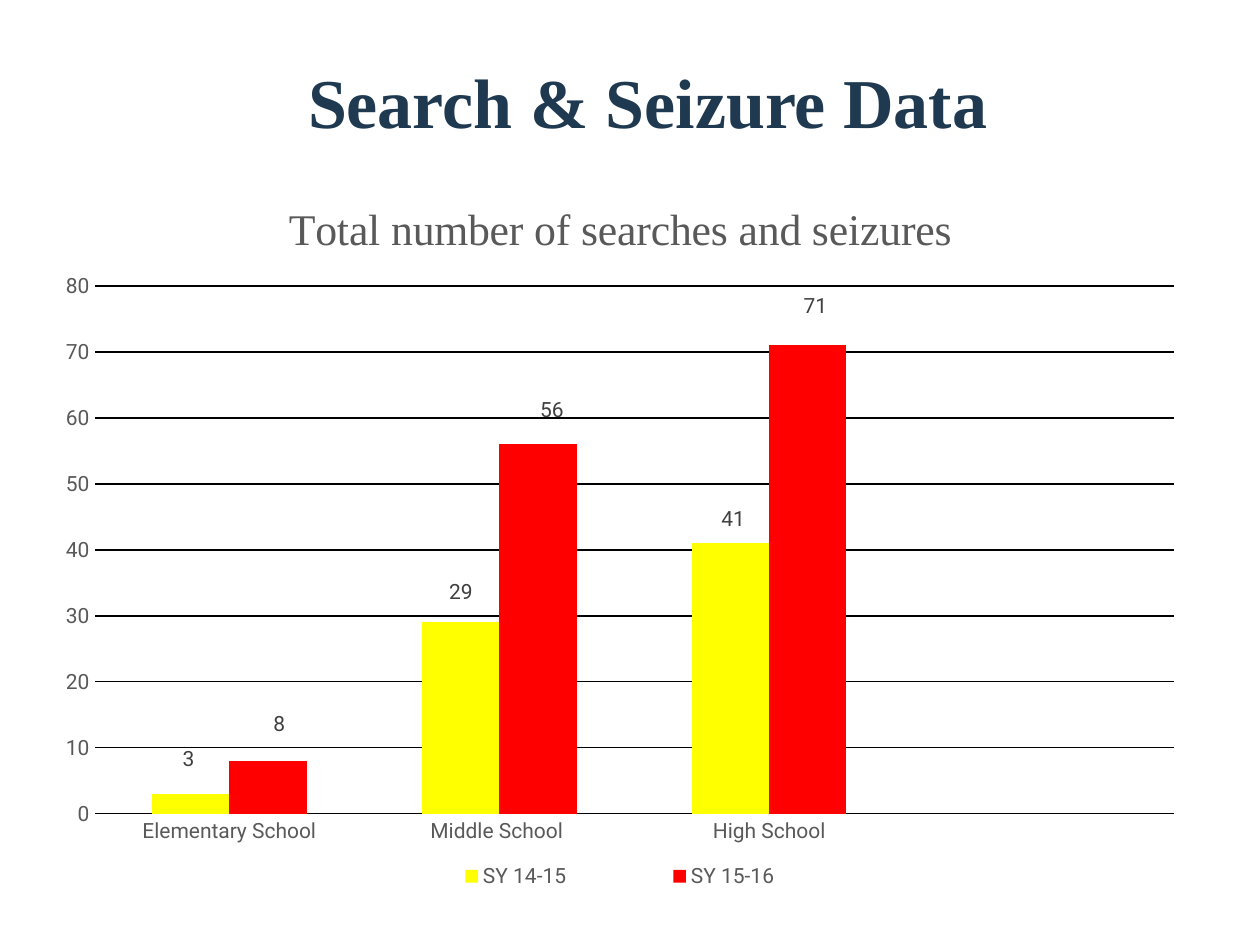
from dataclasses import dataclass

from lxml import etree
from pptx import Presentation
from pptx.chart.data import CategoryChartData
from pptx.dml.color import RGBColor
from pptx.enum import chart as ch, text
from pptx.oxml.ns import qn
from pptx.util import Inches, Pt

COLORS = {"navy": "1E3950", "gray": "595959", "label": "404040",
          "grid": "000000", "yellow": "FFFF00", "red": "FF0000"}
SERIF, SANS = "Times New Roman", "Roboto"
SCHOOLS = ["Elementary School", "Middle School ", "High School", ""]
CHART_WIDTH, CHART_HEIGHT = 9.17, 5.75
C15 = "http://schemas.microsoft.com/office/drawing/2012/chart"
LABEL_EXTENSION = "{CE6537A1-D6FC-4f65-9D91-7224C49458BB}"


@dataclass
class SchoolYear:
    name: str
    searches: list[int | None]
    color: str
    label_shifts: list[tuple[float, float]]  # inches right and down


@dataclass
class Spot:
    """Inches from the chart's top left corner."""
    left: float
    top: float
    width: float | None = None
    height: float | None = None


YEARS = [
    SchoolYear("SY 14-15", [3, 29, 41, None], "yellow",
               [(-0.02, -0.14), (0, -0.1), (0.02, -0.05)]),
    SchoolYear("SY 15-16", [8, 56, 71, None], "red",
               [(0.09, -0.15), (0.11, -0.13), (0.06, -0.17)]),
]
HEADING = Spot(1.9, 0.12)
PLOT = Spot(0.42, 0.85, 8.57, 4.19)
LEGEND = Spot(2.57, 5.36, 4.04, 0.35)


def rgb(name: str) -> RGBColor:
    return RGBColor.from_string(COLORS[name])


def style(font, face: str, size: float, color: str, bold: bool = False) -> None:
    font.name, font.size, font.bold = face, Pt(size), bold
    font.color.rgb = rgb(color)


def set_layout(part, index: int, **values) -> None:
    """Give a chart part a manual layout, as its child at the given index."""
    for old in part.findall(qn("c:layout")):
        part.remove(old)
    layout = etree.Element(qn("c:layout"))
    manual = etree.SubElement(layout, qn("c:manualLayout"))
    for tag, value in values.items():
        etree.SubElement(manual, qn(f"c:{tag}")).set("val", str(value))
    part.insert(index, layout)


def place(part, index: int, spot: Spot, **target) -> None:
    """Put a chart part at a spot, turned into fractions of the chart."""
    values = {"x": spot.left / CHART_WIDTH, "y": spot.top / CHART_HEIGHT}
    if spot.width is not None:
        values |= {"w": spot.width / CHART_WIDTH, "h": spot.height / CHART_HEIGHT}
    set_layout(part, index, **target, xMode="edge", yMode="edge", **values)


def hide_leader_lines(labels) -> None:
    for lines in labels.findall(qn("c:showLeaderLines")):
        lines.set("val", "0")
    extensions = etree.SubElement(labels, qn("c:extLst"))
    extension = etree.SubElement(extensions, qn("c:ext"), nsmap={"c15": C15})
    extension.set("uri", LABEL_EXTENSION)
    etree.SubElement(extension, f"{{{C15}}}showLeaderLines").set("val", "0")


def format_series(series, year: SchoolYear) -> None:
    series.format.fill.solid()
    series.format.fill.fore_color.rgb = rgb(year.color)
    series.invert_if_negative = False

    for point in range(len(year.label_shifts)):
        label = series.points[point].data_label
        style(label.font, SANS, 12, "label")
        label.position = ch.XL_LABEL_POSITION.OUTSIDE_END

    labels = series.data_labels._element
    for label, (right, down) in zip(labels.findall(qn("c:dLbl")), year.label_shifts):
        set_layout(label, 1, x=right / CHART_WIDTH, y=down / CHART_HEIGHT)
    hide_leader_lines(labels)


def format_heading(chart) -> None:
    chart.has_title = True
    heading = chart.chart_title.text_frame
    heading.text = "Total number of searches and seizures"
    style(heading.paragraphs[0].font, SERIF, 25, "gray")
    place(chart.chart_title._element, 1, HEADING)


def format_plot(chart) -> None:
    plot = chart.plots[0]
    plot.gap_width, plot.overlap, plot.vary_by_categories = 150, 0, False
    place(chart._chartSpace.chart.plotArea, 0, PLOT, layoutTarget="inner")
    for series, year in zip(plot.series, YEARS):
        format_series(series, year)


def format_axes(chart) -> None:
    for axis in (chart.category_axis, chart.value_axis):
        axis.major_tick_mark = axis.minor_tick_mark = ch.XL_TICK_MARK.NONE
        axis.format.line.fill.background()
        style(axis.tick_labels.font, SANS, 12, "gray")

    counts = chart.value_axis
    counts.minimum_scale, counts.maximum_scale, counts.major_unit = 0, 80, 10
    grid = counts.major_gridlines.format.line
    grid.color.rgb, grid.width = rgb("grid"), Pt(0.75)


def format_legend(chart) -> None:
    chart.has_legend = True
    legend = chart.legend
    legend.position = ch.XL_LEGEND_POSITION.BOTTOM
    legend.include_in_layout = False
    style(legend.font, SANS, 12, "gray")
    place(legend._element, 1, LEGEND)


def add_search_chart(slide) -> None:
    counts = CategoryChartData()
    counts.categories = SCHOOLS
    for year in YEARS:
        counts.add_series(year.name, year.searches)
    chart = slide.shapes.add_chart(
        ch.XL_CHART_TYPE.COLUMN_CLUSTERED, Inches(0.33), Inches(1.42),
        Inches(CHART_WIDTH), Inches(CHART_HEIGHT), counts).chart
    style(chart.font, SANS, 10, "grid")
    format_heading(chart)
    format_plot(chart)
    format_axes(chart)
    format_legend(chart)


def add_title(slide) -> None:
    title = slide.shapes.title
    title.left, title.top = Inches(1.1), Inches(0.17)
    title.width, title.height = Inches(8.08), Inches(1.25)
    title.text_frame.text = "Search & Seizure Data"
    title.text_frame.vertical_anchor = text.MSO_ANCHOR.MIDDLE
    line = title.text_frame.paragraphs[0]
    line.alignment = text.PP_ALIGN.CENTER
    style(line.font, SERIF, 40, "navy", bold=True)


def main() -> None:
    deck = Presentation()
    deck.slide_width, deck.slide_height = Inches(10), Inches(7.5)
    slide = deck.slides.add_slide(deck.slide_layouts[5])
    add_title(slide)
    add_search_chart(slide)
    deck.save("out.pptx")


if __name__ == "__main__":
    main()
